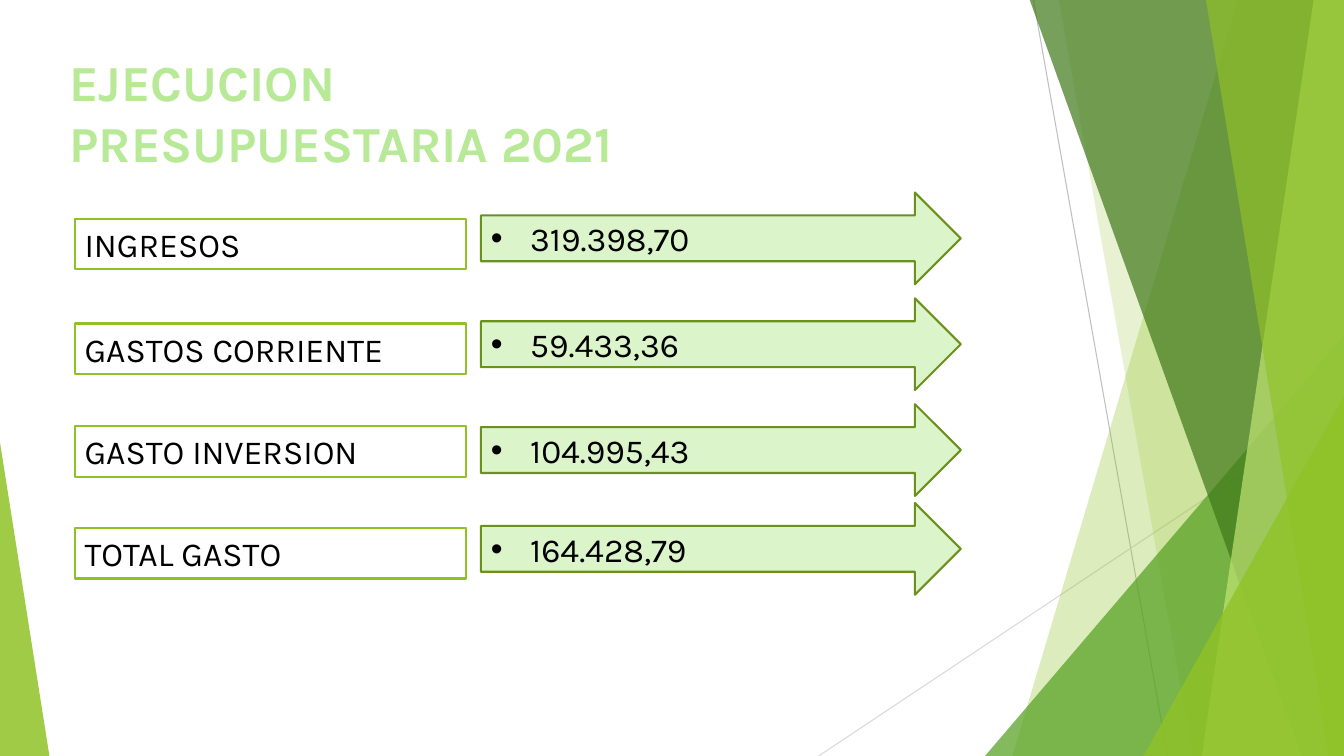
from dataclasses import dataclass

from lxml import etree
from pptx import Presentation
from pptx.dml.color import RGBColor
from pptx.enum.shapes import MSO_CONNECTOR, MSO_SHAPE
from pptx.enum.text import MSO_ANCHOR, MSO_AUTO_SIZE, PP_ALIGN
from pptx.oxml.ns import qn
from pptx.shapes.autoshape import Shape
from pptx.slide import Slide
from pptx.text.text import TextFrame
from pptx.util import Emu, Pt

RECT = MSO_SHAPE.RECTANGLE
ARROW = MSO_SHAPE.RIGHT_ARROW
TRIANGLE = MSO_SHAPE.ISOSCELES_TRIANGLE
STRAIGHT = MSO_CONNECTOR.STRAIGHT
LEFT = PP_ALIGN.LEFT
TOP, MIDDLE = MSO_ANCHOR.TOP, MSO_ANCHOR.MIDDLE
GROW = MSO_AUTO_SIZE.SHAPE_TO_FIT_TEXT

SCALE = 9144  # EMU per px, 100 px to the inch
WIDE, HIGH = 1333, 750
EDGE = -1  # top of the wedges


@dataclass(frozen=True)
class Theme:
    font: str = "Karla"
    head: float = 36
    body: float = 24
    rule: float = 1.5
    hair: float = 0.75
    rim: float = 1.75
    ink: str = "000000"
    white: str = "FFFFFF"
    green: str = "90C226"
    leaf: str = "54A021"
    dark: str = "3F7819"
    lime: str = "C0E474"
    pale: str = "DBF4CA"
    olive: str = "6B901C"
    title: str = "B7E996"
    gray: str = "BFBFBF"
    mist: str = "D9D9D9"


THEME = Theme()


@dataclass(frozen=True)
class Ray:
    x1: int
    y1: int
    x2: int
    y2: int
    color: str


@dataclass(frozen=True)
class Wedge:
    """Band from a slanted left side to the right edge of the slide."""
    top: int
    base: int
    color: str
    alpha: int


@dataclass(frozen=True)
class Peak:
    """Right triangle standing on the bottom edge of the slide."""
    x: int
    y: int
    width: int
    apex: int
    color: str
    alpha: int


@dataclass(frozen=True)
class Row:
    label: str
    value: str
    box: int
    arrow: int


RAYS = [
    Ray(1025, 0, 1158, HIGH, THEME.gray),
    Ray(WIDE, 403, 812, HIGH, THEME.mist),
]
FACETS = [
    Wedge(1228, 1004, THEME.green, 30),
    Wedge(1050, 1183, THEME.green, 20),
    Peak(977, 333, 356, 1, THEME.leaf, 72),
    Wedge(1021, 1291, THEME.dark, 70),
    Wedge(1303, 1192, THEME.lime, 70),
    Wedge(1196, 1318, THEME.green, 65),
    Peak(1134, 393, 199, 1, THEME.green, 80),
    Peak(0, 439, 49, 0, THEME.green, 85),
]
ROWS = [
    Row("INGRESOS", "319.398,70", 217, 191),
    Row("GASTOS CORRIENTE", "59.433,36", 321, 296),
    Row("GASTO INVERSION", "104.995,43", 423, 401),
    Row("TOTAL GASTO", "164.428,79", 524, 499),
]


def px(size: int) -> Emu:
    return Emu(size * SCALE)


def rgb(color: str) -> RGBColor:
    return RGBColor.from_string(color)


def paint(shape: Shape, color: str, alpha: int = 100) -> None:
    shape.shadow.inherit = False
    shape.fill.solid()
    shape.fill.fore_color.rgb = rgb(color)
    shape.line.fill.background()
    if alpha < 100:
        tone = shape.fill._xPr.find(".//" + qn("a:srgbClr"))
        etree.SubElement(tone, qn("a:alpha")).set("val", str(alpha * 1000))


def draw_ray(slide: Slide, ray: Ray) -> None:
    line = slide.shapes.add_connector(
        STRAIGHT, px(ray.x1), px(ray.y1), px(ray.x2), px(ray.y2))
    line.line.color.rgb = rgb(ray.color)
    line.line.width = Pt(THEME.hair)
    etree.SubElement(line._element.spPr, qn("a:effectLst"))


def draw_facet(slide: Slide, facet: Wedge | Peak) -> None:
    if isinstance(facet, Wedge):
        pen = slide.shapes.build_freeform(facet.top, EDGE, scale=SCALE)
        pen.add_line_segments(
            [(WIDE, EDGE), (WIDE, HIGH), (facet.base, HIGH)], close=True)
        shape = pen.convert_to_shape()
    else:
        shape = slide.shapes.add_shape(
            TRIANGLE, px(facet.x), px(facet.y),
            px(facet.width), px(HIGH - facet.y))
        shape.adjustments[0] = facet.apex
    paint(shape, facet.color, facet.alpha)


def write(frame: TextFrame, text: str, size: float, color: str,
          bold: bool = False) -> None:
    frame.text = text
    frame.word_wrap = True
    para = frame.paragraphs[0]
    para.alignment = LEFT
    font = para.runs[0].font
    font.name = THEME.font
    font.size = Pt(size)
    font.bold = bold
    font.color.rgb = rgb(color)


def draw_title(slide: Slide) -> None:
    frame = slide.shapes.add_textbox(
        px(59), px(46), px(656), px(131)).text_frame
    write(frame, "EJECUCION PRESUPUESTARIA 2021", THEME.head, THEME.title, True)
    frame.auto_size = GROW
    # Letter outline
    props = frame.paragraphs[0].runs[0].font._element
    rim = etree.Element(qn("a:ln"), w=str(Pt(THEME.rim)))
    fill = etree.SubElement(rim, qn("a:solidFill"))
    etree.SubElement(fill, qn("a:srgbClr")).set("val", THEME.leaf)
    props.insert(0, rim)


def add_bullet(frame: TextFrame, indent: int) -> None:
    props = frame.paragraphs[0]._p.get_or_add_pPr()
    props.set("marL", str(px(indent)))
    props.set("indent", str(-px(indent)))
    etree.SubElement(props, qn("a:buFont")).set("typeface", "Arial")
    etree.SubElement(props, qn("a:buChar")).set("char", "•")


def draw_row(slide: Slide, row: Row) -> None:
    box = slide.shapes.add_shape(RECT, px(74), px(row.box), px(388), px(50))
    arrow = slide.shapes.add_shape(
        ARROW, px(477), px(row.arrow), px(476), px(91))
    for shape, text, fill, line, anchor in (
            (box, row.label, THEME.white, THEME.green, TOP),
            (arrow, row.value, THEME.pale, THEME.olive, MIDDLE)):
        paint(shape, fill)
        shape.line.color.rgb = rgb(line)
        shape.line.width = Pt(THEME.rule)
        write(shape.text_frame, text, THEME.body, THEME.ink)
        shape.text_frame.vertical_anchor = anchor
    box.text_frame.auto_size = GROW
    add_bullet(arrow.text_frame, 39)


def main() -> None:
    deck = Presentation()
    deck.slide_width, deck.slide_height = px(WIDE), px(HIGH)
    slide = deck.slides.add_slide(deck.slide_layouts[6])

    # Backdrop
    for ray in RAYS:
        draw_ray(slide, ray)
    for facet in FACETS:
        draw_facet(slide, facet)

    # Heading and budget rows
    draw_title(slide)
    for row in ROWS:
        draw_row(slide, row)

    deck.save("out.pptx")


if __name__ == "__main__":
    main()
